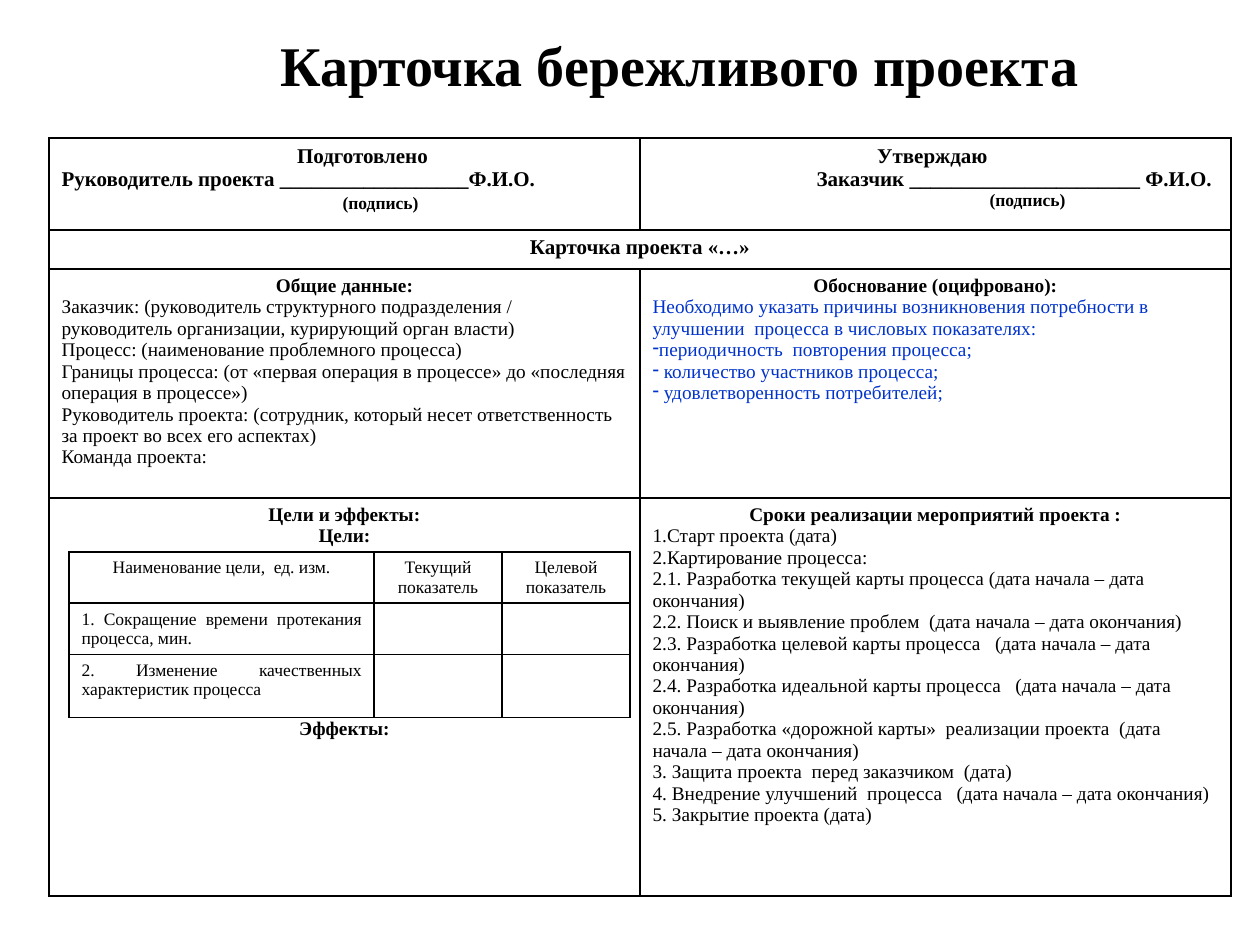
from dataclasses import dataclass

from pptx import Presentation
from pptx.dml.color import RGBColor as RGB
from pptx.enum.text import MSO_ANCHOR as ANCHOR, MSO_AUTO_SIZE as FIT, PP_ALIGN as AL
from pptx.oxml import parse_xml
from pptx.oxml.ns import nsdecls
from pptx.util import Pt

PX = 914400 // 126  # EMU in one px


@dataclass
class Theme:
    font: str = "Times New Roman"
    ink: str = "000000"
    hint: str = "0033CC"
    title: int = 32
    head: int = 12
    body: int = 11
    small: int = 10


T = Theme()


def write(tf, paras):
    """Fill a text frame from (text, format) pairs."""
    for i, (text, fmt) in enumerate(paras):
        p = tf.paragraphs[0] if i == 0 else tf.add_paragraph()
        p.alignment = fmt.get("align", AL.LEFT)
        p.space_before = Pt(fmt.get("before", 0))
        pPr = p._p.get_or_add_pPr()
        for side in ("marL", "marR"):
            if side in fmt:
                pPr.set(side, str(fmt[side] * PX))
        if "bullet" in fmt:
            pPr.set("marL", "0")
            pPr.set("indent", "0")
            tag, attr = fmt["bullet"]
            pPr.append(parse_xml(f'<a:{tag} {nsdecls("a")} {attr}/>'))
        r = p.add_run()
        r.text = text
        font = {"name": T.font, "size": Pt(fmt.get("size", T.body)), "bold": fmt.get("bold", False)}
        for key, value in font.items():
            setattr(r.font, key, value)
        r.font.color.rgb = RGB.from_string(fmt.get("color", T.ink))


def add_grid(s, x, y, cols, rows, content):
    """Add a plain table with thin black borders."""
    tb = s.shapes.add_table(len(rows), len(cols), x * PX, y * PX, sum(cols) * PX, sum(rows) * PX).table
    tb.first_row = tb.horz_banding = False
    for col, w in zip(tb.columns, cols):
        col.width = w * PX
    for row, h in zip(tb.rows, rows):
        row.height = h * PX
    for i in range(len(rows)):
        for j in range(len(cols)):
            cell = tb.cell(i, j)
            cell.fill.background()
            tcPr = cell._tc.get_or_add_tcPr()
            for k, side in enumerate("LRTB"):
                tcPr.insert(k, parse_xml(
                    f'<a:ln{side} {nsdecls("a")} w="12700"><a:solidFill>'
                    f'<a:srgbClr val="{T.ink}"/></a:solidFill></a:ln{side}>'))
            write(cell.text_frame, content.get((i, j), []))
    return tb


prs = Presentation()
prs.slide_width, prs.slide_height = 1260 * PX, 945 * PX
s = prs.slides.add_slide(prs.slide_layouts[5])

# Title
title = s.shapes.title
for key, value in dict(left=266, top=29, width=827, height=79).items():
    setattr(title, key, value * PX)
tf = title.text_frame
for key, value in dict(word_wrap=True, auto_size=FIT.NONE, vertical_anchor=ANCHOR.MIDDLE).items():
    setattr(tf, key, value)
write(tf, [("Карточка бережливого проекта", dict(align=AL.CENTER, size=T.title, bold=True))])
tf.paragraphs[0].line_spacing = 0.9

# Paragraph formats
head = dict(align=AL.CENTER, size=T.head, bold=True)
sub = dict(align=AL.CENTER, bold=True)
sign = dict(align=AL.CENTER, size=T.small, bold=True)
body = {}
hint = dict(color=T.hint)
dash = dict(color=T.hint, bullet=("buChar", 'char="-"'))
number = dict(bullet=("buAutoNum", 'type="arabicPeriod"'))
center = dict(align=AL.CENTER, size=T.small)
justify = dict(align=AL.JUSTIFY, size=T.small)

# Project card
card = {
    (0, 0): [
        ("Подготовлено", head | dict(marL=36)),
        ("Руководитель проекта __________________Ф.И.О.", head | dict(align=AL.LEFT)),
        ("(подпись)", sign | dict(marL=72, before=2)),
    ],
    (0, 1): [
        ("Утверждаю", head | dict(marR=6)),
        ("Заказчик ______________________ Ф.И.О.", head | dict(align=AL.RIGHT)),
        ("(подпись)", sign | dict(marL=190)),
    ],
    (1, 0): [("Карточка проекта «…»", head)],
    (2, 0): [("Общие данные:", sub)] + [(text, body) for text in (
        "Заказчик: (руководитель структурного подразделения / руководитель организации, курирующий орган власти)",
        "Процесс: (наименование проблемного процесса)",
        "Границы процесса: (от «первая операция в процессе» до «последняя операция в процессе»)",
        "Руководитель проекта: (сотрудник, который несет ответственность за проект во всех его аспектах)",
        "Команда проекта:",
    )],
    (2, 1): [
        ("Обоснование (оцифровано):", sub),
        ("Необходимо указать причины возникновения потребности в улучшении  процесса в числовых показателях:", hint),
        ("периодичность  повторения процесса;", dash),
        (" количество участников процесса;", dash),
        (" удовлетворенность потребителей;", dash),
    ],
    (3, 0): [
        ("Цели и эффекты:", sub),
        ("Цели:", sub),
        ("Эффекты:", sub | dict(before=98)),
    ],
    (3, 1): [
        ("Сроки реализации мероприятий проекта :", sub),
        ("Старт проекта (дата)", number),
        ("Картирование процесса:", number),
    ] + [(text, body) for text in (
        "2.1. Разработка текущей карты процесса (дата начала – дата окончания)",
        "2.2. Поиск и выявление проблем  (дата начала – дата окончания)",
        "2.3. Разработка целевой карты процесса   (дата начала – дата окончания)",
        "2.4. Разработка идеальной карты процесса   (дата начала – дата окончания)",
        "2.5. Разработка «дорожной карты»  реализации проекта  (дата начала – дата окончания)",
        "3. Защита проекта  перед заказчиком  (дата)",
        "4. Внедрение улучшений  процесса   (дата начала – дата окончания)",
        "5. Закрытие проекта (дата)",
    )],
}
tb = add_grid(s, 49, 138, [591, 591], [92, 39, 229, 398], card)
tb.cell(1, 0).merge(tb.cell(1, 1))

# Goals table inside the card
goals = {
    (0, 0): [("Наименование цели,  ед. изм.", center)],
    (0, 1): [("Текущий показатель", center)],
    (0, 2): [("Целевой показатель", center)],
    (1, 0): [("1. Сокращение времени протекания процесса, мин.", justify)],
    (2, 0): [("2. Изменение качественных характеристик процесса", justify)],
}
add_grid(s, 69, 552, [305, 128, 128], [51, 51, 63], goals)

prs.save("out.pptx")
